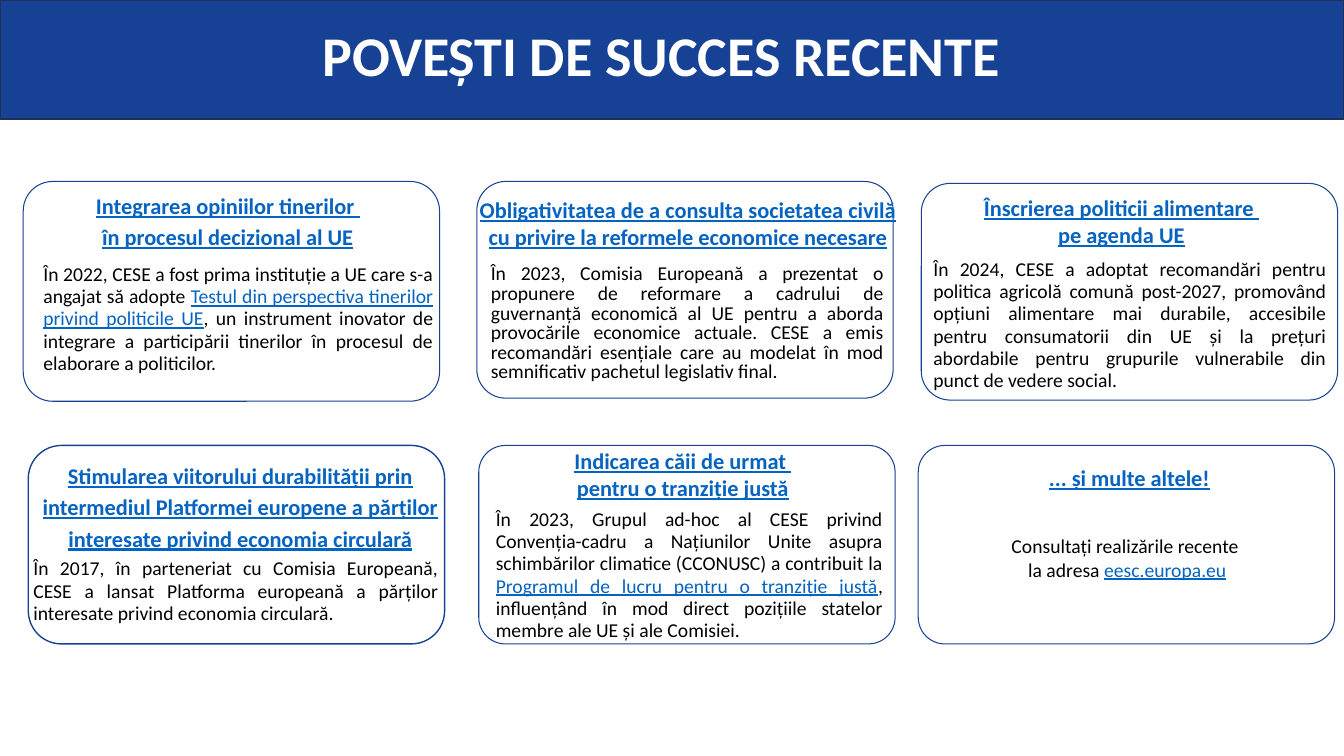
from copy import deepcopy

from pptx import Presentation
from pptx import util as u
from pptx.dml.color import RGBColor
from pptx.enum import shapes, text
from pptx.oxml.ns import qn

BLUE, NAVY, LINK, BLACK, WHITE = "174195", "1E3256", "0563C1", "000000", "FFFFFF"
CARD_WIDTH = 297.4


def colour(hex_code):
    return RGBColor.from_string(hex_code)


class StorySlide:
    font = "Calibri"
    title_size, heading_size, body_size = 40, 16, 14

    def __init__(self, deck):
        self.page = deck.slides.add_slide(deck.slide_layouts[5])

    def panel(self, kind, area, line, width, fill=None):
        box = self.page.shapes.add_shape(kind, *map(u.Pt, area))
        box.shadow.inherit = False
        if fill:
            box.fill.solid()
            box.fill.fore_color.rgb = colour(fill)
        else:
            box.fill.background()
        box.line.color.rgb = colour(line)
        box.line.width = u.Pt(width)
        return box

    def style(self, span, size, hex_code, bold=False, underline=False):
        span.font.name = self.font
        span.font.size = u.Pt(size)
        span.font.color.rgb = colour(hex_code)
        span.font.bold = bold
        span.font.underline = underline

    def frame(self, box, align, spacing):
        frame = box.text_frame
        frame.word_wrap = True
        frame.vertical_anchor = text.MSO_ANCHOR.TOP
        frame.margin_left = frame.margin_right = 0
        frame.margin_top = frame.margin_bottom = 0
        for para in frame.paragraphs:
            para.alignment = align
            if spacing:
                para.line_spacing = u.Pt(spacing)
            for span in para.runs:
                yield span
            for gap in para._p.findall(qn("a:br")):
                gap.append(deepcopy(para.runs[0]._r.rPr))

    def title(self, words, area, spacing):
        band = self.panel(shapes.MSO_SHAPE.RECTANGLE, (0, 0, 960, 85), NAVY, 1, BLUE)
        box = self.page.shapes.title
        box.left, box.top, box.width, box.height = map(u.Pt, area)
        box._element.addprevious(band._element)
        box.text_frame.text = words
        for span in self.frame(box, text.PP_ALIGN.CENTER, spacing):
            self.style(span, self.title_size, WHITE, bold=True)

    def heading(self, words, area, spacing):
        box = self.page.shapes.add_textbox(*map(u.Pt, area))
        box.text_frame.text = words
        for span in self.frame(box, text.PP_ALIGN.CENTER, spacing):
            self.style(span, self.heading_size, LINK, bold=True, underline=True)

    def body(self, parts, area, spacing, align):
        box = self.page.shapes.add_textbox(*map(u.Pt, area))
        para = box.text_frame.paragraphs[0]
        para.text = parts[0]
        for part in parts[1:]:
            para.add_run().text = part
        for span in self.frame(box, align, spacing):
            linked = span.text in parts[1:2]
            self.style(span, self.body_size, LINK if linked else BLACK, underline=linked)

    def card(self, left, top, height, heading, body, align=text.PP_ALIGN.JUSTIFY,
             radius=0.134, line_width=0.75):
        box = self.panel(shapes.MSO_SHAPE.ROUNDED_RECTANGLE,
                         (left, top, CARD_WIDTH, height), BLUE, line_width)
        box.adjustments[0] = radius
        self.heading(*heading)
        self.body(*body, align)


CARDS = [
    dict(left=16.6, top=129.6, height=157,
         heading=("Integrarea opiniilor tinerilor \nîn procesul decizional al UE",
                  (19.4, 133.9, 286.6, 47.5), 22.4),
         body=(["În 2022, CESE a fost prima instituție a UE care s-a angajat să adopte ",
                "Testul din perspectiva tinerilor privind politicile UE",
                ", un instrument inovator de integrare a participării tinerilor "
                "în procesul de elaborare a politicilor."],
               (31, 187.9, 278.6, 70.6), 15.9)),
    dict(left=340.6, top=129.6, height=154.8,
         heading=("Obligativitatea de a consulta societatea civilă "
                  "cu privire la reformele economice necesare",
                  (342, 140.4, 298.8, 64.8), None),
         body=(["În 2023, Comisia Europeană a prezentat o propunere de reformare a cadrului "
                "de guvernanță economică al UE pentru a aborda provocările economice actuale. "
                "CESE a emis recomandări esențiale care au modelat în mod semnificativ "
                "pachetul legislativ final."],
               (350.6, 189.4, 280.8, 85), 14)),
    dict(left=658.1, top=131, height=154.8,
         heading=("Înscrierea politicii alimentare \vpe agenda UE",
                  (658.8, 139, 284.4, 42.5), None),
         body=(["În 2024, CESE a adoptat recomandări pentru politica agricolă comună "
                "post-2027, promovând opțiuni alimentare mai durabile, accesibile pentru "
                "consumatorii din UE și la prețuri abordabile pentru grupurile vulnerabile "
                "din punct de vedere social."],
               (666.7, 184.3, 280.8, 88.6), 15.9)),
    dict(left=20.2, top=318.2, height=141.8, radius=0.167, line_width=1,
         heading=("Stimularea viitorului durabilității prin intermediul Platformei "
                  "europene a părților interesate privind economia circulară",
                  (23, 326.9, 297.4, 65.5), 22.4),
         body=(["În 2017, în parteneriat cu Comisia Europeană, CESE a lansat Platforma "
                "europeană a părților interesate privind economia circulară."],
               (23.8, 398.2, 289.4, 48.2), 15.9)),
    dict(left=342, top=318.2, height=141.8,
         heading=("Indicarea căii de urmat \vpentru o tranziție justă",
                  (350.6, 319.7, 274.3, 38.9), None),
         body=(["În 2023, Grupul ad-hoc al CESE privind Convenția-cadru a Națiunilor Unite "
                "asupra schimbărilor climatice (CCONUSC) a contribuit la ",
                "Programul de lucru pentru o tranziție justă",
                ", influențând în mod direct pozițiile statelor membre ale UE "
                "și ale Comisiei."],
               (354.2, 362.9, 276.5, 97.9), 15.9)),
    dict(left=655.9, top=318.2, height=141.8, align=text.PP_ALIGN.CENTER,
         heading=("... și multe altele!", (724.3, 328.3, 164.9, 21.6), 22.4),
         body=(["Consultați realizările recente \vla adresa ", "eesc.europa.eu"],
               (709.2, 381.6, 192.2, 33.8), 16.8)),
]


def main():
    deck = Presentation()
    deck.slide_width, deck.slide_height = u.Pt(960), u.Pt(540)
    stories = StorySlide(deck)
    stories.title("POVEȘTI DE SUCCES RECENTE", (203, 29.5, 538.6, 36), 33)
    for card in CARDS:
        stories.card(**card)
    deck.save("out.pptx")


if __name__ == "__main__":
    main()
